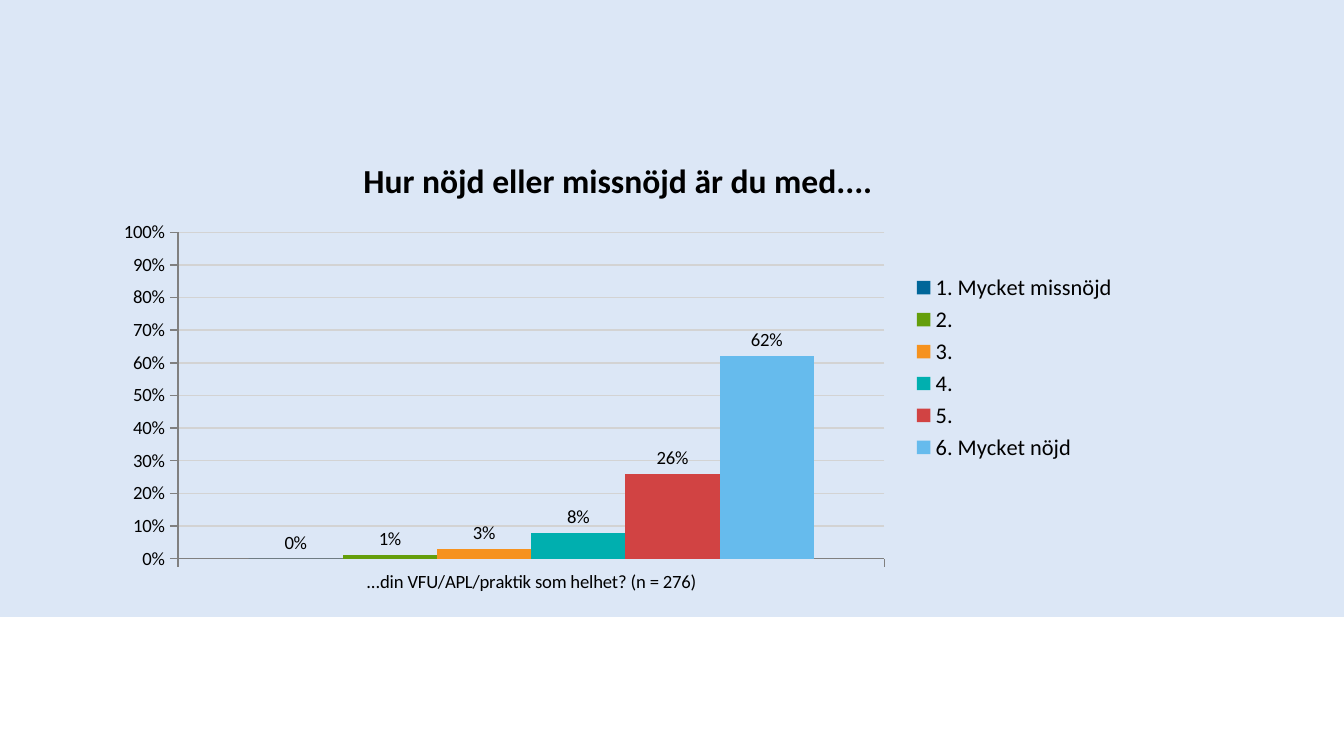
from lxml import etree
from pptx import Presentation
from pptx.chart import data as chart_data
from pptx.dml.color import RGBColor
from pptx.enum import chart as ch, shapes
from pptx.oxml.ns import qn
from pptx.util import Inches, Pt

THEME = {
    "font": "Calibri", "text": "000000", "panel": "DCE7F6",
    "grid": "D3D3D3", "axis": "808080",
    "title_size": 18, "legend_size": 12, "label_size": 10,
}
TITLE = "Hur nöjd eller missnöjd är du med...."
QUESTION = "...din VFU/APL/praktik som helhet? (n = 276)"
ANSWERS = [
    ("1. Mycket missnöjd", 0, "006699"),
    ("2.", 0.01, "649E0B"),
    ("3.", 0.03, "F6921E"),
    ("4.", 0.08, "00AFAF"),
    ("5.", 0.26, "D14343"),
    ("6. Mycket nöjd", 0.62, "66BBED"),
]
PLOT_AREA = {"x": 0.07, "y": 0.21, "w": 0.69, "h": 0.7}


def color(name):
    return RGBColor.from_string(THEME.get(name, name))


def style_font(font, size, bold=False):
    font.name = THEME["font"]
    font.size = Pt(THEME[size])
    font.bold = bold
    font.color.rgb = color("text")


def style_line(line, name):
    line.color.rgb = color(name)
    line.width = Pt(0.75)


def place_plot(chart):
    plot_area = chart._chartSpace.chart.plotArea
    for old in plot_area.findall(qn("c:layout")):
        plot_area.remove(old)
    layout = etree.Element(qn("c:layout"))
    manual = etree.SubElement(layout, qn("c:manualLayout"))
    settings = [("layoutTarget", "inner"), ("xMode", "edge"), ("yMode", "edge")]
    for tag, value in settings + list(PLOT_AREA.items()):
        etree.SubElement(manual, qn("c:" + tag)).set("val", str(value))
    plot_area.insert(0, layout)


def add_panel(page):
    panel = page.shapes.add_shape(
        shapes.MSO_SHAPE.RECTANGLE, 0, 0, Inches(10), Inches(4.59))
    panel.shadow.inherit = False
    panel.fill.solid()
    panel.fill.fore_color.rgb = color("panel")
    panel.line.fill.background()


def add_answers_chart(page):
    data = chart_data.CategoryChartData(number_format="0%")
    data.categories = [QUESTION]
    for name, share, _ in ANSWERS:
        data.add_series(name, [share])
    chart = page.shapes.add_chart(
        ch.XL_CHART_TYPE.COLUMN_CLUSTERED,
        Inches(0.79), Inches(1), Inches(7.62), Inches(3.47), data).chart
    style_font(chart.font, "title_size")

    chart.has_title = True
    title = chart.chart_title.text_frame
    title.text = TITLE
    style_font(title.paragraphs[0].runs[0].font, "title_size", bold=True)
    chart.chart_title.include_in_layout = False

    chart.has_legend = True
    chart.legend.position = ch.XL_LEGEND_POSITION.RIGHT
    chart.legend.include_in_layout = False
    style_font(chart.legend.font, "legend_size")

    for axis in (chart.category_axis, chart.value_axis):
        axis.major_tick_mark = ch.XL_TICK_MARK.OUTSIDE
        style_font(axis.tick_labels.font, "label_size")
        style_line(axis.format.line, "axis")
    shares = chart.value_axis
    shares.minimum_scale, shares.maximum_scale, shares.major_unit = 0, 1, 0.1
    shares.tick_labels.number_format = "0%"
    shares.tick_labels.number_format_is_linked = False
    style_line(shares.major_gridlines.format.line, "grid")

    plot = chart.plots[0]
    plot.gap_width, plot.overlap = 150, 0
    plot.vary_by_categories = False
    for series, (_, _, fill) in zip(plot.series, ANSWERS):
        series.format.fill.solid()
        series.format.fill.fore_color.rgb = color(fill)
        labels = series.data_labels
        labels.show_value = True
        labels.position = ch.XL_LABEL_POSITION.OUTSIDE_END
        labels.number_format = "0%"
        labels.number_format_is_linked = False
        style_font(labels.font, "label_size")
    place_plot(chart)


def main():
    deck = Presentation()
    deck.slide_width = Inches(10)
    deck.slide_height = deck.slide_width * 9 // 16
    page = deck.slides.add_slide(deck.slide_layouts[6])
    add_panel(page)
    add_answers_chart(page)
    deck.save("out.pptx")


if __name__ == "__main__":
    main()
